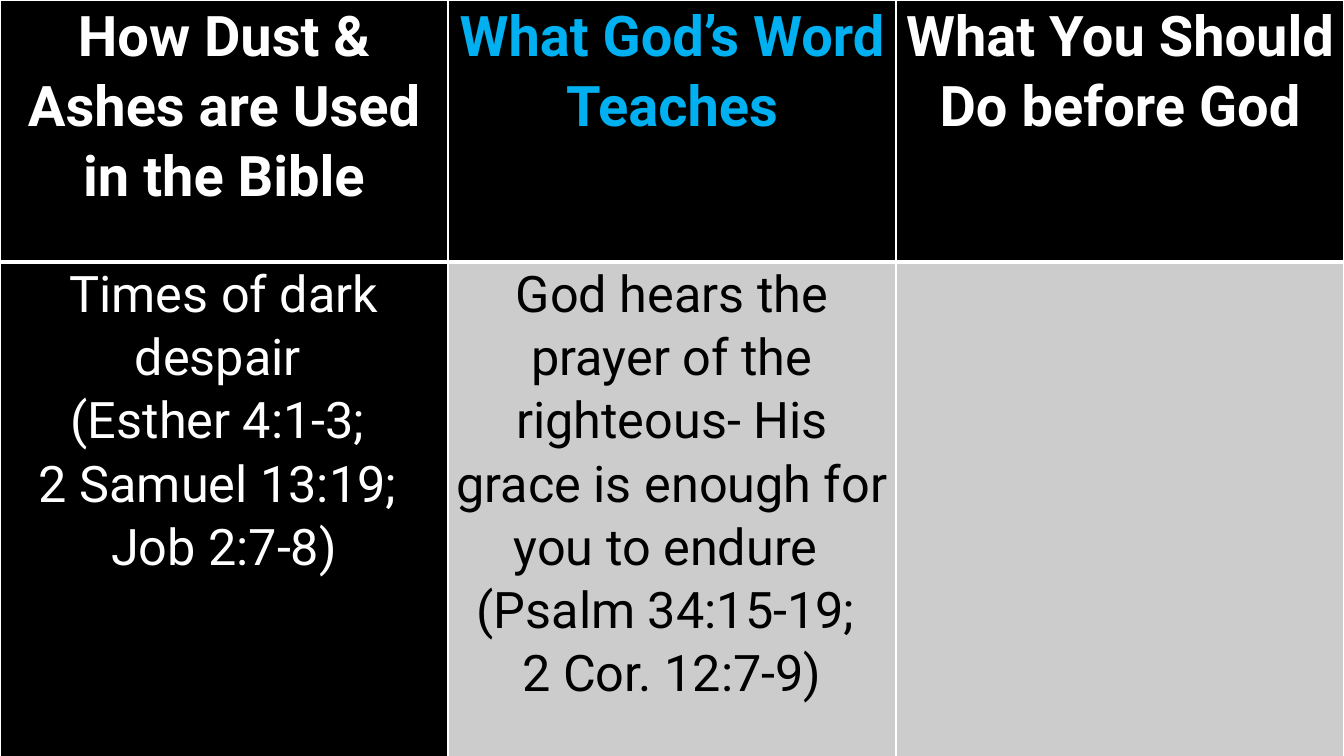
from lxml import etree
from pptx import Presentation
from pptx.dml.color import RGBColor
from pptx.enum.text import PP_ALIGN
from pptx.oxml.ns import qn
from pptx.util import Cm, Pt

CENTER = PP_ALIGN.CENTER
FONT = "Roboto"
COLORS = {"black": "000000", "white": "FFFFFF", "blue": "00B0F0", "gray": "CCCCCC"}
SLIDE_WIDTH, SLIDE_HEIGHT = Cm(33.87), Cm(19.05)
ROW_HEIGHTS = (Cm(6.6), Cm(12.9))

HEADINGS = [
    (["How Dust & Ashes are Used in the Bible"], "white", "black"),
    (["What God’s Word ", "Teaches"], "blue", "black"),
    (["What You Should Do before God"], "white", "black"),
]
LESSONS = [
    (["Times of dark despair ", "(Esther 4:1-3; ", "2 Samuel 13:19; ", "Job 2:7-8)"],
     "white", "black"),
    (["God hears the prayer of the righteous- His grace is enough for you to endure ",
      "(Psalm 34:15-19; ", "2 Cor. 12:7-9)"], "black", "gray"),
    ([], "black", "gray"),
]


def rgb(color):
    return RGBColor.from_string(COLORS[color])


def write_text(frame, lines, *, size, color, bold=False):
    for index, line in enumerate(lines):
        paragraph = frame.paragraphs[0] if index == 0 else frame.add_paragraph()
        paragraph.alignment = CENTER
        paragraph.line_spacing = 1.07
        run = paragraph.add_run()
        run.text = line
        run.font.name = FONT
        run.font.size = Pt(size)
        run.font.bold = bold
        run.font.color.rgb = rgb(color)


def set_borders(cell, bottom):
    properties = cell._tc.get_or_add_tcPr()
    widths = {"lnL": 1, "lnR": 1, "lnT": 1, "lnB": bottom}
    for position, (side, width) in enumerate(widths.items()):
        line = etree.Element(qn(f"a:{side}"), w=str(Pt(width)))
        fill = etree.SubElement(line, qn("a:solidFill"))
        etree.SubElement(fill, qn("a:srgbClr"), val=COLORS["white"])
        properties.insert(position, line)


def fill_row(row, contents, *, size, bold, bottom):
    for cell, (lines, color, background) in zip(row.cells, contents):
        cell.margin_left = cell.margin_right = Cm(0.18)
        cell.margin_top = cell.margin_bottom = 0
        cell.fill.solid()
        cell.fill.fore_color.rgb = rgb(background)
        set_borders(cell, bottom)
        write_text(cell.text_frame, lines, size=size, color=color, bold=bold)


def add_lesson_table(slide):
    table = slide.shapes.add_table(
        2, len(HEADINGS), 0, 0, SLIDE_WIDTH, sum(ROW_HEIGHTS)).table
    for row, height in zip(table.rows, ROW_HEIGHTS):
        row.height = height
    fill_row(table.rows[0], HEADINGS, size=40, bold=True, bottom=3)
    fill_row(table.rows[1], LESSONS, size=36, bold=False, bottom=1)


def main():
    """Build the slide on dust and ashes in the Bible."""
    deck = Presentation()
    deck.slide_width, deck.slide_height = SLIDE_WIDTH, SLIDE_HEIGHT
    slide = deck.slides.add_slide(deck.slide_layouts[6])
    slide.background.fill.solid()
    slide.background.fill.fore_color.rgb = rgb("black")
    add_lesson_table(slide)
    deck.save("out.pptx")


if __name__ == "__main__":
    main()
